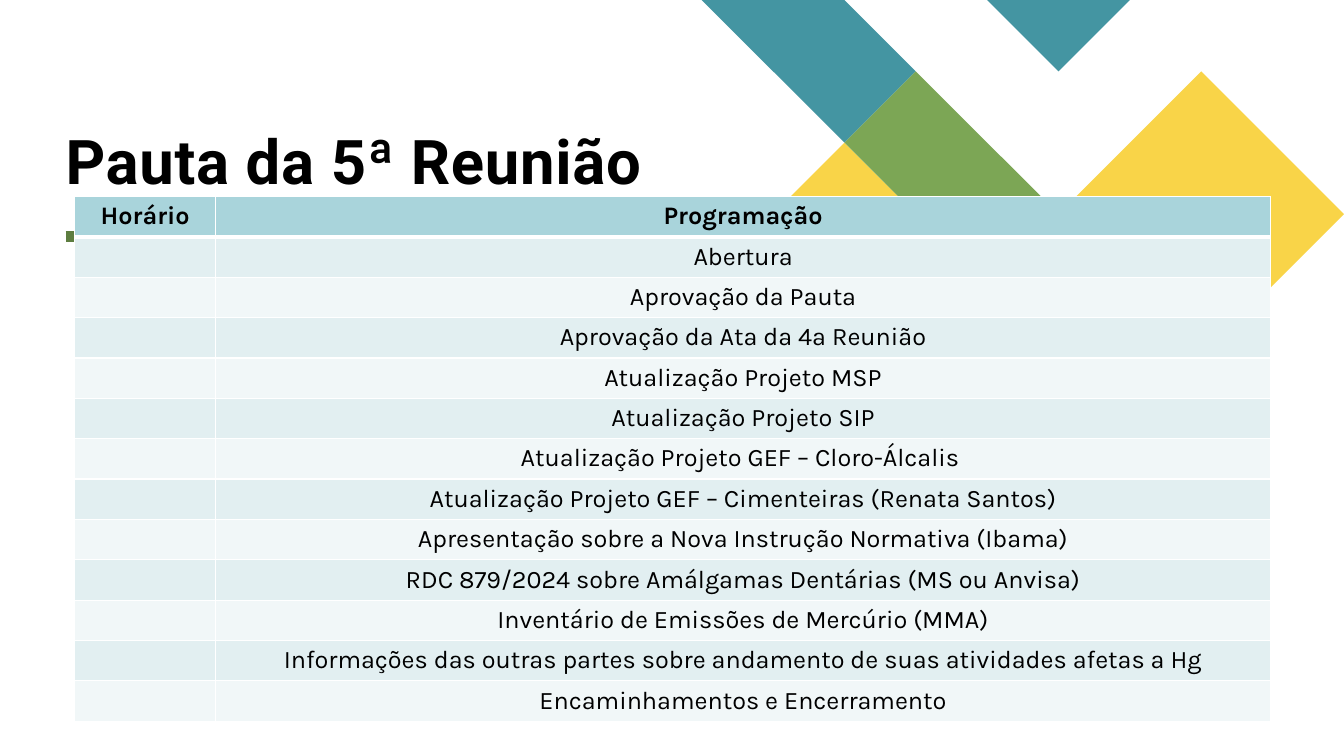
"""Build the meeting agenda slide with its diamond pattern and programme table."""
from lxml.etree import SubElement
from pptx import Presentation
from pptx.dml.color import RGBColor
from pptx.enum.shapes import MSO_CONNECTOR
from pptx.enum.text import MSO_ANCHOR, PP_ALIGN
from pptx.oxml.ns import qn
from pptx.util import Inches, Pt

TEAL = RGBColor(0x44, 0x95, 0xA2)
YELLOW = RGBColor(0xF9, 0xD4, 0x48)
GREEN = RGBColor(0x7C, 0xA6, 0x55)
DARK_GREEN = RGBColor(0x5D, 0x7D, 0x40)
HEADER_FILL = RGBColor(0xA9, 0xD4, 0xDB)
BAND_FILLS = [RGBColor(0xF1, 0xF7, 0xF8), RGBColor(0xE2, 0xEF, 0xF1)]
BLACK = RGBColor(0, 0, 0)

SLIDE_WIDTH = 13.33
PATTERN_LEFT = 6.96
STEP = (SLIDE_WIDTH - PATTERN_LEFT) / 9

DIAMONDS = [
    (TEAL, [[(3, 1), (2, 0), (0, 0), (2, 2)], [(6, 4), (5, 3), (4, 4), (5, 5)]]),
    (YELLOW, [[(2, 2), (1, 3), (3, 5), (4, 4)]]),
    (TEAL, [[(6, 0), (4, 0), (5, 1)]]),
    (GREEN, [[(3, 1), (2, 2), (4, 4), (5, 3)]]),
    (YELLOW, [[(9, 3), (7, 1), (5, 3), (7, 5)]]),
]

AGENDA = [
    "Abertura",
    "Aprovação da Pauta",
    "Aprovação da Ata da 4ª Reunião",
    "Atualização Projeto MSP",
    "Atualização Projeto SIP",
    "Atualização Projeto GEF – Cloro-Álcalis ",
    "Atualização Projeto GEF – Cimenteiras (Renata Santos)",
    "Apresentação sobre a Nova Instrução Normativa (Ibama)",
    "RDC 879/2024 sobre Amálgamas Dentárias (MS ou Anvisa)",
    "Inventário de Emissões de Mercúrio (MMA)",
    "Informações das outras partes sobre andamento de suas atividades afetas a Hg",
    "Encaminhamentos e Encerramento",
]


def write_text(text_frame, text, size=18, font="Karla", bold=False, align=PP_ALIGN.CENTER):
    paragraph = text_frame.paragraphs[0]
    paragraph.alignment = align
    run = paragraph.add_run()
    run.text = text
    run.font.size = Pt(size)
    run.font.name = font
    run.font.bold = bold
    run.font.color.rgb = BLACK
    return paragraph


def add_white_borders(cell, top=1, bottom=1):
    properties = cell._tc.get_or_add_tcPr()
    for side, width in (("L", 1), ("R", 1), ("T", top), ("B", bottom)):
        border = SubElement(properties, qn(f"a:ln{side}"), w=str(Pt(width)))
        fill = SubElement(border, qn("a:solidFill"))
        SubElement(fill, qn("a:srgbClr"), val="FFFFFF")


presentation = Presentation()
presentation.slide_width = Inches(SLIDE_WIDTH)
presentation.slide_height = Inches(7.5)
slide = presentation.slides.add_slide(presentation.slide_layouts[6])

for color, contours in DIAMONDS:
    outlines = [
        [(Inches(PATTERN_LEFT + column * STEP), Inches(row * STEP)) for column, row in contour]
        for contour in contours
    ]
    builder = slide.shapes.build_freeform(*outlines[0][0])
    builder.add_line_segments(outlines[0][1:], close=True)
    for outline in outlines[1:]:
        builder.move_to(*outline[0])
        builder.add_line_segments(outline[1:], close=True)
    shape = builder.convert_to_shape()
    shape.shadow.inherit = False
    shape.fill.solid()
    shape.fill.fore_color.rgb = color
    shape.line.fill.background()

accent = slide.shapes.add_connector(
    MSO_CONNECTOR.STRAIGHT, Inches(0.65), Inches(2.35), Inches(2.98), Inches(2.35))
accent.line.color.rgb = DARK_GREEN
accent.line.width = Pt(8)
SubElement(accent._element.spPr, qn("a:effectLst"))

title = slide.shapes.add_textbox(Inches(0.65), Inches(0.21), Inches(7.42), Inches(1.74))
title_frame = title.text_frame
title_frame.word_wrap = True
title_frame.vertical_anchor = MSO_ANCHOR.BOTTOM
title_frame.margin_left = title_frame.margin_right = 0
title_frame.margin_top = title_frame.margin_bottom = 0
title_paragraph = write_text(
    title_frame, "Pauta da 5ª Reunião", size=44, font="Roboto", bold=True, align=PP_ALIGN.LEFT)
title_paragraph.line_spacing = 0.8
title_paragraph.runs[0].font._element.set("spc", "50")

rows = [("Horário", "Programação")] + [("", topic) for topic in AGENDA]
row_height = Inches(0.39)
table = slide.shapes.add_table(
    len(rows), 2, Inches(0.74), Inches(1.95), Inches(11.86), row_height * len(rows)).table
table.columns[0].width = Inches(1.4)
table.columns[1].width = Inches(10.46)

for row_index, texts in enumerate(rows):
    table.rows[row_index].height = row_height
    is_header = row_index == 0
    for column_index, text in enumerate(texts):
        cell = table.cell(row_index, column_index)
        add_white_borders(cell, top=3 if row_index == 1 else 1, bottom=3 if is_header else 1)
        cell.fill.solid()
        cell.fill.fore_color.rgb = HEADER_FILL if is_header else BAND_FILLS[row_index % 2]
        if text:
            write_text(cell.text_frame, text, bold=is_header)
        else:
            cell.margin_top = cell.margin_bottom = 0

presentation.save("out.pptx")
